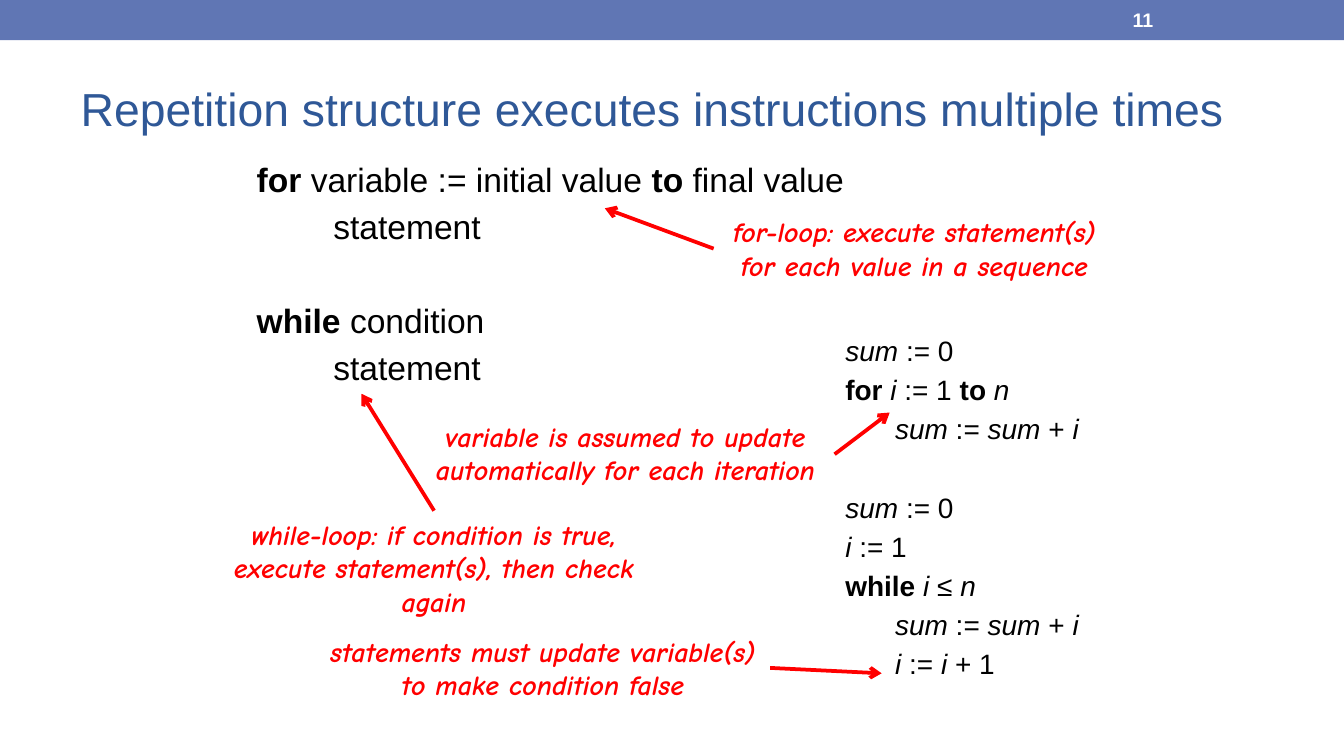
from lxml import etree
from pptx import Presentation
from pptx import util as u
from pptx.dml.color import RGBColor
from pptx.enum import shapes, text
from pptx.oxml.ns import qn

COLORS = {"bar": "6076B4", "title": "2F5897", "code": "000000",
          "note": "FF0000", "white": "FFFFFF"}

# Each code line: (indent level, blank line before it, [(words, style), ...])
SUM_START = [("sum", "i"), (" := 0", "")]
SUM_STEP = [("sum", "i"), (" := ", ""), ("sum", "i"), (" + ", ""), ("i", "i")]
SYNTAX = [
    (0, False, [("for", "b"), (" variable := initial value ", ""),
                ("to", "b"), (" final value", "")]),
    (1, False, [("statement", "")]),
    (0, True, [("while", "b"), (" condition", "")]),
    (1, False, [("statement", "")]),
]
EXAMPLES = [
    (0, False, SUM_START),
    (0, False, [("for ", "b"), ("i", "i"), (" := 1 ", ""), ("to ", "b"), ("n", "i")]),
    (1, False, SUM_STEP),
    (0, True, SUM_START),
    (0, False, [("i", "i"), (" := 1", "")]),
    (0, False, [("while ", "b"), ("i", "i"), (" ≤ ", ""), ("n", "i")]),
    (1, False, SUM_STEP),
    (1, False, [("i", "i"), (" := ", ""), ("i", "i"), (" + 1", "")]),
]

# Each note: (words, box, arrow start, arrow end)
NOTES = [
    ("for-loop: execute statement(s) for each value in a sequence",
     (5.31, 1.55, 2.99, 0.61), (5.31, 1.85), (4.5, 1.55)),
    ("variable is assumed to update automatically for each iteration",
     (3.1, 3.07, 3.11, 0.61), (6.21, 3.38), (6.62, 3.07)),
    ("while-loop: if condition is true, execute statement(s), then check again",
     (1.4, 3.8, 3.66, 0.61), (3.23, 3.8), (2.69, 2.93)),
    ("statements must update variable(s) to make condition false",
     (2.35, 4.67, 3.38, 0.61), (5.73, 4.97), (6.56, 5.01)),
]


def rgb(name):
    return RGBColor.from_string(COLORS[name])


def place(shape, left, top, width, height):
    shape.left, shape.top = u.Inches(left), u.Inches(top)
    shape.width, shape.height = u.Inches(width), u.Inches(height)


def add_span(para, words, size, color, font="Arial", bold=False, italic=False):
    span = para.add_run()
    span.text = words
    span.font.name = font
    span.font.size = u.Pt(size)
    span.font.bold = bold
    span.font.italic = italic
    span.font.color.rgb = rgb(color)


def set_frame(box, margins=(0.1, 0.05), anchor=text.MSO_ANCHOR.TOP):
    frame = box.text_frame
    frame.word_wrap = True
    frame.auto_size = text.MSO_AUTO_SIZE.NONE
    frame.vertical_anchor = anchor
    frame.margin_left = frame.margin_right = u.Inches(margins[0])
    frame.margin_top = frame.margin_bottom = u.Inches(margins[1])
    return frame


def add_text_box(slide, left, top, width, height):
    return slide.shapes.add_textbox(*map(u.Inches, (left, top, width, height)))


def add_bar(slide):
    bar = slide.shapes.add_shape(shapes.MSO_SHAPE.RECTANGLE, 0, 0,
                                 u.Inches(10), u.Inches(0.3))
    bar.shadow.inherit = False
    bar.fill.solid()
    bar.fill.fore_color.rgb = rgb("bar")
    bar.line.fill.background()


def write_code(frame, lines, size, indent, base=0):
    """Fill a frame with code lines; a blank line is made by paragraph spacing."""
    for index, (level, gap, spans) in enumerate(lines):
        para = frame.paragraphs[0] if index == 0 else frame.add_paragraph()
        para.alignment = text.PP_ALIGN.LEFT
        para.space_before = u.Pt(round(size * (1.6 if gap else 0.2), 1))
        properties = para._p.get_or_add_pPr()
        properties.set("marL", str(u.Inches(indent if level else base)))
        properties.set("indent", "0")
        etree.SubElement(properties, qn("a:buNone"))
        for words, style in spans:
            add_span(para, words, size, "code", bold=style == "b", italic=style == "i")


def add_arrow(slide, start, end):
    arrow = slide.shapes.add_connector(shapes.MSO_CONNECTOR.STRAIGHT,
                                       *map(u.Inches, start + end))
    arrow.line.color.rgb = rgb("note")
    arrow.line.width = u.Pt(2)
    etree.SubElement(arrow.line._get_or_add_ln(), qn("a:tailEnd"), type="arrow")
    etree.SubElement(arrow._element.spPr, qn("a:effectLst"))


def add_note(slide, words, area, start, end):
    frame = set_frame(add_text_box(slide, *area))
    para = frame.paragraphs[0]
    para.alignment = text.PP_ALIGN.CENTER
    add_span(para, words, 15, "note", font="Comic Neue", bold=True, italic=True)
    add_arrow(slide, start, end)


def add_page_number(slide, number):
    box = add_text_box(slide, 8.33, 0.01, 1.17, 0.27)
    frame = set_frame(box, anchor=text.MSO_ANCHOR.MIDDLE)
    add_span(frame.paragraphs[0], number, 10.5, "white", bold=True)


def fill_title(title, words):
    place(title, 0.5, 0.44, 9, 0.81)
    para = set_frame(title, anchor=text.MSO_ANCHOR.MIDDLE).paragraphs[0]
    para.alignment = text.PP_ALIGN.LEFT
    para.line_spacing = 0.8
    add_span(para, words, 24.8, "title")


def main():
    deck = Presentation()
    deck.slide_width = u.Inches(10)
    deck.slide_height = deck.slide_width * 9 // 16
    slide = deck.slides.add_slide(deck.slide_layouts[1])
    add_bar(slide)
    add_page_number(slide, "11")
    fill_title(slide.shapes.title, "Repetition structure executes instructions multiple times")

    body = slide.placeholders[1]
    place(body, 1.81, 1.13, 4.81, 2.37)
    write_code(set_frame(body), SYNTAX, size=18, indent=0.57)

    examples = add_text_box(slide, 6.21, 2.44, 1.98, 2.76)
    write_code(set_frame(examples, margins=(0.07, 0.04)), EXAMPLES,
               size=15, indent=0.38, base=0.01)

    for note in NOTES:
        add_note(slide, *note)
    deck.save("out.pptx")


if __name__ == "__main__":
    main()
